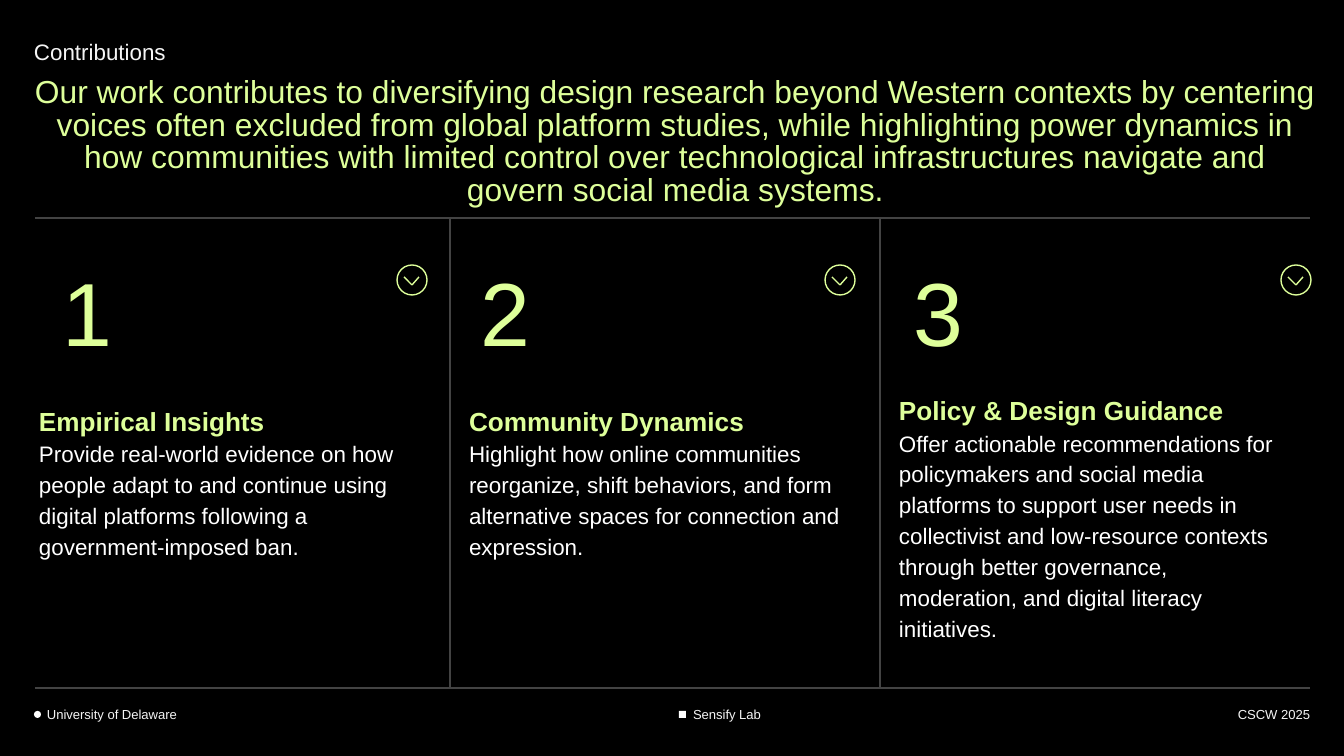
from dataclasses import dataclass

from lxml import etree
from pptx import Presentation
from pptx import util as u
from pptx.dml.color import RGBColor
from pptx.enum import shapes, text
from pptx.oxml.ns import qn

EMU_PER_PX = 914400 / 134.4


@dataclass(frozen=True)
class Theme:
    font: str = "Arial"
    background: str = "000000"
    accent: str = "DEFF9A"
    body: str = "FFFFFF"
    soft: str = "F5F5F5"
    rule: str = "434343"
    line_width: float = 0.75
    number_size: int = 48
    title_size: int = 17
    heading_size: int = 14
    body_size: int = 12
    footer_size: int = 7


@dataclass(frozen=True)
class Contribution:
    number: str
    number_left: int
    icon_left: int
    text_box: tuple
    heading: str
    body: str


THEME = Theme()
RULE_LEFT, RULE_RIGHT = 35, 1310
RULE_TOP, RULE_BOTTOM = 218, 688
DIVIDERS = (450, 880)
NUMBER_TOP, ICON_TOP, ICON_SIZE = 241, 265, 30

TITLE = (
    "Our work contributes to diversifying design research beyond Western contexts by "
    "centering voices often excluded from global platform studies, while highlighting "
    "power dynamics in how communities with limited control over technological "
    "infrastructures navigate and govern social media systems."
)
CONTRIBUTIONS = (
    Contribution(
        "1", 63, 397, (39, 398, 391, 175), "Empirical Insights",
        "Provide real-world evidence on how people adapt to and continue using digital "
        "platforms following a government-imposed ban."),
    Contribution(
        "2", 481, 825, (469, 398, 391, 175), "Community Dynamics",
        "Highlight how online communities reorganize, shift behaviors, and form "
        "alternative spaces for connection and expression."),
    Contribution(
        "3", 914, 1281, (899, 378, 391, 277), "Policy & Design Guidance",
        "Offer actionable recommendations for policymakers and social media platforms "
        "to support user needs in collectivist and low-resource contexts through better "
        "governance, moderation, and digital literacy initiatives."),
)


def px(value):
    return u.Emu(round(value * EMU_PER_PX))


def rgb(value):
    return RGBColor.from_string(value)


def add_line(parent, start, end, color):
    line = parent.add_connector(
        shapes.MSO_CONNECTOR.STRAIGHT, *map(px, start + end))
    line.line.color.rgb = rgb(color)
    line.line.width = u.Pt(THEME.line_width)
    etree.SubElement(line._element.spPr, qn("a:effectLst"))


def add_mark(parent, kind, left, top, size, fill=None, outline=None):
    """Add a small square shape, either filled or outlined."""
    mark = parent.add_shape(kind, px(left), px(top), px(size), px(size))
    mark.shadow.inherit = False
    if fill:
        mark.fill.solid()
        mark.fill.fore_color.rgb = rgb(fill)
    else:
        mark.fill.background()
    if outline:
        mark.line.color.rgb = rgb(outline)
        mark.line.width = u.Pt(THEME.line_width)
    else:
        mark.line.fill.background()


def add_chevron_icon(slide, left, top):
    icon = slide.shapes.add_group_shape().shapes
    add_mark(icon, shapes.MSO_SHAPE.OVAL, left, top, ICON_SIZE, outline=THEME.accent)
    tip = (left + 15, top + 20)
    for offset in (7, 22):
        add_line(icon, (left + offset, top + 12), tip, THEME.accent)


def add_text(slide, box, paragraphs, align=text.PP_ALIGN.LEFT, bottom=False,
             spacing=1.15, inset=0):
    """Add a text box; each paragraph is (wording, size, color, bold)."""
    frame = slide.shapes.add_textbox(*map(px, box)).text_frame
    frame.word_wrap = True
    frame.margin_left = frame.margin_top = 0
    frame.margin_right = frame.margin_bottom = px(inset)
    frame.vertical_anchor = text.MSO_ANCHOR.BOTTOM if bottom else text.MSO_ANCHOR.TOP
    for index, (wording, size, color, bold) in enumerate(paragraphs):
        paragraph = frame.add_paragraph() if index else frame.paragraphs[0]
        paragraph.alignment = align
        paragraph.line_spacing = spacing
        run = paragraph.add_run()
        run.text = wording
        run.font.name = THEME.font
        run.font.size = u.Pt(size)
        run.font.bold = bold
        run.font.color.rgb = rgb(color)


def add_header(slide):
    add_text(slide, (34, 34, 429, 34),
             [("Contributions", THEME.body_size, THEME.soft, False)])
    add_text(slide, (34, 78, 1296, 144),
             [(TITLE, THEME.title_size, THEME.accent, False)],
             align=text.PP_ALIGN.CENTER, spacing=0.85, inset=13)


def add_rules(slide):
    for y in (RULE_TOP, RULE_BOTTOM):
        add_line(slide.shapes, (RULE_LEFT, y), (RULE_RIGHT, y), THEME.rule)
    for x in DIVIDERS:
        add_line(slide.shapes, (x, RULE_TOP), (x, RULE_BOTTOM), THEME.rule)


def add_contribution(slide, item):
    add_chevron_icon(slide, item.icon_left, ICON_TOP)
    add_text(slide, (item.number_left, NUMBER_TOP, 165, 175),
             [(item.number, THEME.number_size, THEME.accent, False)], inset=13)
    add_text(slide, item.text_box,
             [(item.heading, THEME.heading_size, THEME.accent, True),
              (item.body, THEME.body_size, THEME.body, False)],
             bottom=True, inset=13)


def add_footer(slide):
    add_mark(slide.shapes, shapes.MSO_SHAPE.OVAL, 34, 711, 7, fill=THEME.body)
    add_mark(slide.shapes, shapes.MSO_SHAPE.RECTANGLE, 679, 711, 7, fill=THEME.body)
    for wording, left, width, align in (
        ("University of Delaware", 47, 396, text.PP_ALIGN.LEFT),
        ("Sensify Lab", 693, 337, text.PP_ALIGN.LEFT),
        ("CSCW 2025", 1008, 302, text.PP_ALIGN.RIGHT),
    ):
        add_text(slide, (left, 687, width, 35),
                 [(wording, THEME.footer_size, THEME.soft, False)],
                 align=align, bottom=True)


def main():
    presentation = Presentation()
    presentation.slide_width, presentation.slide_height = px(1344), px(756)
    slide = presentation.slides.add_slide(presentation.slide_layouts[6])
    slide.background.fill.solid()
    slide.background.fill.fore_color.rgb = rgb(THEME.background)
    add_rules(slide)
    add_header(slide)
    for item in CONTRIBUTIONS:
        add_contribution(slide, item)
    add_footer(slide)
    presentation.save("out.pptx")


if __name__ == "__main__":
    main()
